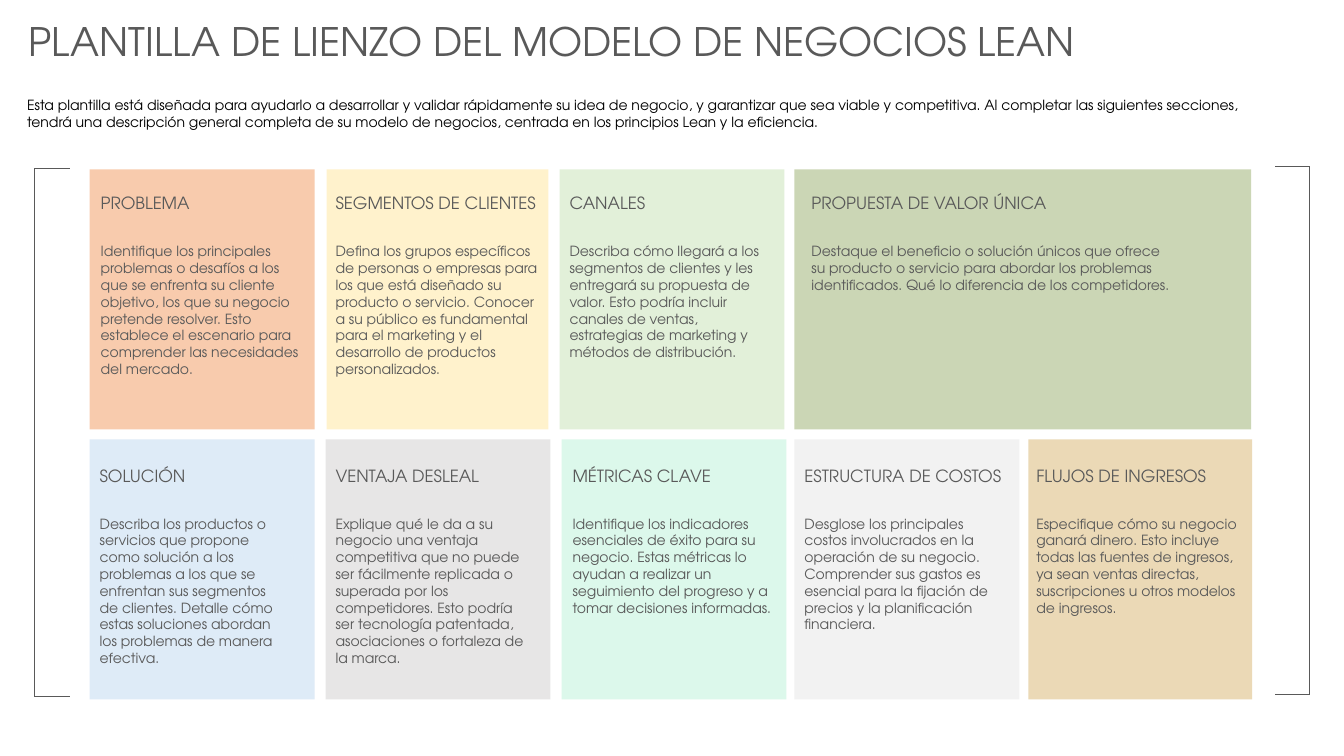
"""Builds the Lean business model canvas slide."""
import dataclasses

import lxml.etree
import pptx
import pptx.dml.color
import pptx.enum.shapes
import pptx.enum.text
import pptx.oxml.ns
import pptx.util

EMU_PER_PX = 9144


@dataclasses.dataclass(frozen=True)
class Theme:
    """Colours, font and type sizes of the slide."""
    font: str = "TeX Gyre Adventor"
    ink: str = "595959"
    intro_ink: str = "000000"
    title_size: int = 28
    heading_size: int = 12
    body_size: int = 10
    line_width: int = 1
    peach: str = "F8CBAD"
    yellow: str = "FFF2CC"
    green: str = "E2F0D9"
    olive: str = "CBD6B5"
    blue: str = "DEEBF7"
    grey: str = "E7E6E6"
    mint: str = "DCF8EB"
    light_grey: str = "F2F2F2"
    sand: str = "EBD9B6"


@dataclasses.dataclass(frozen=True)
class Card:
    """One canvas section: its column, text placement and wording."""
    left: int
    width: int
    fill: str
    text_left: int
    text_width: int
    heading: str
    body: str


THEME = Theme()

TITLE = "PLANTILLA DE LIENZO DEL MODELO DE NEGOCIOS LEAN"
INTRO = (
    "Esta plantilla está diseñada para ayudarlo a desarrollar y validar rápidamente su idea de negocio, "
    "y garantizar que sea viable y competitiva. Al completar las siguientes secciones, tendrá una "
    "descripción general completa de su modelo de negocios, centrada en los principios Lean y la eficiencia."
)

TOP_CARDS = [
    Card(89, 223, THEME.peach, 90, 222, "PROBLEMA",
         "Identifique los principales problemas o desafíos a los que se enfrenta su cliente objetivo, los que "
         "su negocio pretende resolver. Esto establece el escenario para comprender las necesidades del mercado."),
    Card(324, 220, THEME.yellow, 323, 222, "SEGMENTOS DE CLIENTES",
         "Defina los grupos específicos de personas o empresas para los que está diseñado su producto o servicio. "
         "Conocer a su público es fundamental para el marketing y el desarrollo de productos personalizados."),
    Card(555, 223, THEME.green, 555, 222, "CANALES",
         "Describa cómo llegará a los segmentos de clientes y les entregará su propuesta de valor. Esto podría "
         "incluir canales de ventas, estrategias de marketing y métodos de distribución."),
    Card(788, 453, THEME.olive, 795, 430, "PROPUESTA DE VALOR ÚNICA",
         "Destaque el beneficio o solución únicos que ofrece\nsu producto o servicio para abordar los problemas "
         "identificados. Qué lo diferencia de los competidores."),
]

BOTTOM_CARDS = [
    Card(89, 223, THEME.blue, 89, 204, "SOLUCIÓN",
         "Describa los productos o servicios que propone como solución a los problemas a los que se enfrentan sus "
         "segmentos de clientes. Detalle cómo estas soluciones abordan los problemas de manera efectiva."),
    Card(323, 223, THEME.grey, 323, 211, "VENTAJA DESLEAL",
         "Explique qué le da a su negocio una ventaja competitiva que no puede ser fácilmente replicada o superada "
         "por los competidores. Esto podría ser tecnología patentada, asociaciones o fortaleza de la marca."),
    Card(557, 223, THEME.mint, 558, 222, "MÉTRICAS CLAVE",
         "Identifique los indicadores esenciales de éxito para su negocio. Estas métricas lo ayudan a realizar un "
         "seguimiento del progreso y a tomar decisiones informadas."),
    Card(788, 223, THEME.light_grey, 788, 222, "ESTRUCTURA DE COSTOS",
         "Desglose los principales costos involucrados en la operación de su negocio. Comprender sus gastos es "
         "esencial para la fijación de precios y la planificación financiera."),
    Card(1020, 222, THEME.sand, 1018, 222, "FLUJOS DE INGRESOS",
         "Especifique cómo su negocio ganará dinero. Esto incluye todas las fuentes de ingresos, ya sean ventas "
         "directas, suscripciones u otros modelos de ingresos."),
]


def px(*lengths):
    """Turn whole pixels into EMU lengths."""
    return [pptx.util.Emu(length * EMU_PER_PX) for length in lengths]


def color(value):
    """Turn a hex string into a colour."""
    return pptx.dml.color.RGBColor.from_string(value)


def write_text(shape, text, size, ink):
    """Set one left-aligned paragraph in a text shape."""
    frame = shape.text_frame
    frame.word_wrap = True
    frame.auto_size = pptx.enum.text.MSO_AUTO_SIZE.SHAPE_TO_FIT_TEXT
    frame.vertical_anchor = pptx.enum.text.MSO_ANCHOR.TOP
    paragraph = frame.paragraphs[0]
    paragraph.text = text
    paragraph.alignment = pptx.enum.text.PP_ALIGN.LEFT
    paragraph.line_spacing = 1.0
    for run in paragraph.runs:
        run.font.name = THEME.font
        run.font.size = pptx.util.Pt(size)
        run.font.color.rgb = color(ink)


def add_text(slide, box, text, size, ink=THEME.ink):
    """Add a wrapped text box."""
    write_text(slide.shapes.add_textbox(*px(*box)), text, size, ink)


def add_header(slide, box):
    """Place the title and the introduction below it."""
    left, top, width, height = box
    title = slide.shapes.title
    title.left, title.top, title.width, title.height = px(left, top, width, 57)
    write_text(title, TITLE, THEME.title_size, THEME.ink)
    add_text(slide, (left - 1, top + height - 44, width - 28, 44), INTRO, THEME.body_size, THEME.intro_ink)


def add_card_row(slide, top, height, cards, heading_offset, body_offset):
    """Place a row of coloured cards with headings and descriptions."""
    for card in cards:
        panel = slide.shapes.add_shape(
            pptx.enum.shapes.MSO_SHAPE.RECTANGLE, *px(card.left, top, card.width, height))
        panel.shadow.inherit = False
        panel.fill.solid()
        panel.fill.fore_color.rgb = color(card.fill)
        panel.line.fill.background()
        heading_box = (card.text_left, top + heading_offset, max(card.text_width, 220), 30)
        add_text(slide, heading_box, card.heading, THEME.heading_size)
        body_box = (card.text_left, top + body_offset, card.text_width, height - body_offset - 10)
        add_text(slide, body_box, card.body, THEME.body_size)


def add_bracket(slide, box, opens_right):
    """Draw a square bracket along the box, open on one side."""
    left, top, width, height = box
    right, bottom = left + width, top + height
    spine = left if opens_right else right
    for ends in ((left, top, right, top), (left, bottom, right, bottom), (spine, top, spine, bottom)):
        line = slide.shapes.add_connector(pptx.enum.shapes.MSO_CONNECTOR.STRAIGHT, *px(*ends))
        line.line.color.rgb = color(THEME.ink)
        line.line.width = pptx.util.Pt(THEME.line_width)
        lxml.etree.SubElement(line._element.spPr, pptx.oxml.ns.qn("a:effectLst"))


def main():
    """Build and save the slide."""
    presentation = pptx.Presentation()
    presentation.slide_width, presentation.slide_height = px(1333, 750)
    slide = presentation.slides.add_slide(presentation.slide_layouts[5])
    add_header(slide, (18, 12, 1295, 123))
    add_card_row(slide, 168, 258, TOP_CARDS, 18, 68)
    add_card_row(slide, 436, 258, BOTTOM_CARDS, 21, 70)
    add_bracket(slide, (34, 167, 35, 524), True)
    add_bracket(slide, (1265, 165, 34, 524), False)
    presentation.save("out.pptx")


if __name__ == "__main__":
    main()
